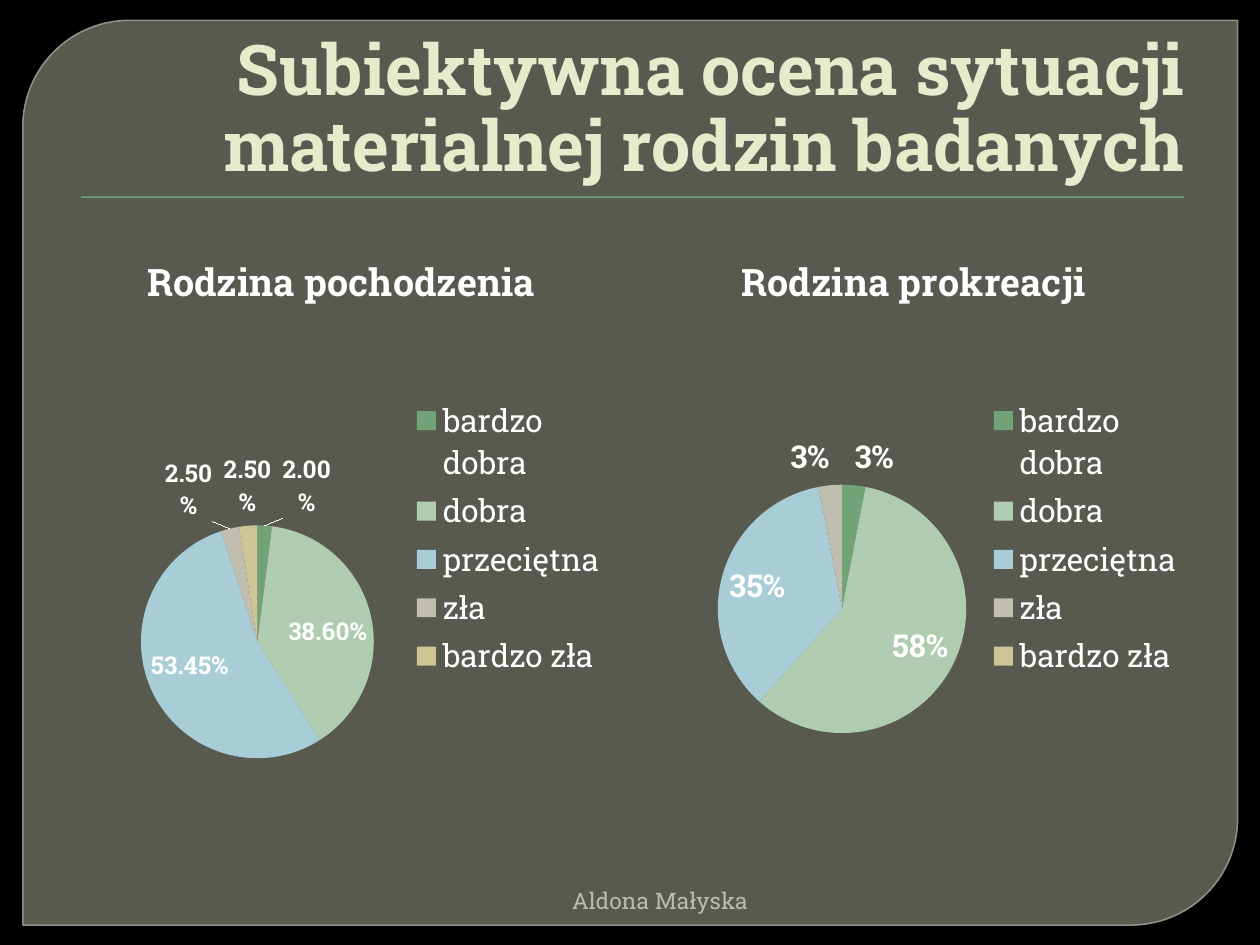
from lxml import etree
from pptx import Presentation
from pptx.chart.data import CategoryChartData
from pptx.dml.color import RGBColor
from pptx.enum.chart import XL_CHART_TYPE, XL_LABEL_POSITION, XL_LEGEND_POSITION
from pptx.enum.shapes import MSO_SHAPE
from pptx.enum.text import MSO_ANCHOR, PP_ALIGN
from pptx.oxml import parse_xml
from pptx.oxml.ns import nsdecls, qn
from pptx.util import Cm, Pt

FONT = "Roboto Slab"
BLACK = RGBColor(0x00, 0x00, 0x00)
WHITE = RGBColor(0xFF, 0xFF, 0xFF)
CARD = RGBColor(0x88, 0x8B, 0x7B)
CARD_LINE = RGBColor(0x9D, 0xA0, 0x90)
CREAM = RGBColor(0xE7, 0xEA, 0xCB)
GREY = RGBColor(0xB9, 0xBB, 0xB2)
GREEN = RGBColor(0x72, 0xA3, 0x76)
SLICES = [GREEN, RGBColor(0xB0, 0xCC, 0xB0), RGBColor(0xA8, 0xCD, 0xD7),
          RGBColor(0xC0, 0xBE, 0xAF), RGBColor(0xCE, 0xC5, 0x97)]

RATINGS = ["bardzo dobra", "dobra", "przeciętna", "zła", "bardzo zła"]
# Title, left edge, values, number format, label size
PIES = [
    ("Rodzina pochodzenia", Cm(1.27), [0.02, 0.386, 0.5345, 0.025, 0.025], "0.00%", Pt(14)),
    ("Rodzina prokreacji ", Cm(12.9), [0.03, 0.58, 0.35, 0.03, 0], "0%", Pt(18)),
]


def style(font, size, color, bold=False):
    font.name = FONT
    font.size = size
    font.bold = bold
    font.color.rgb = color


def set_alpha(fill_parent, percent):
    color = fill_parent.find(qn("a:solidFill"))[0]
    etree.SubElement(color, qn("a:alpha"), val=str(percent * 1000))


def add_backdrop(s):
    """Rounded card and rule, placed behind the title."""
    card = s.shapes.add_shape(MSO_SHAPE.ROUND_2_DIAG_RECTANGLE,
                              Cm(0.46), Cm(0.41), Cm(24.49), Cm(18.24))
    card.adjustments[0] = 0.118
    card.fill.solid()
    card.fill.fore_color.rgb = CARD
    set_alpha(card._element.spPr, 65)
    card.line.color.rgb = CARD_LINE
    card.line.width = Pt(0.87)
    set_alpha(card.line._ln, 88)

    rule = s.shapes.add_shape(MSO_SHAPE.RECTANGLE, Cm(1.63), Cm(3.96), Cm(22.23), Cm(0.03))
    rule.fill.solid()
    rule.fill.fore_color.rgb = GREEN
    rule.line.fill.background()

    for index, sp in enumerate((card, rule), start=2):
        sp.shadow.inherit = False
        s.shapes._spTree.insert(index, sp._element)


def set_title(s, text):
    title = s.shapes.title
    title.left, title.top, title.width, title.height = Cm(1.27), Cm(0.71), Cm(22.86), Cm(3.18)
    tf = title.text_frame
    tf.text = text
    tf.vertical_anchor = MSO_ANCHOR.BOTTOM
    p = tf.paragraphs[0]
    p.alignment = PP_ALIGN.RIGHT
    p.line_spacing = 0.9
    style(p.font, Pt(40), CREAM, bold=True)


def add_pie(s, title, left, values, number_format, label_size):
    data = CategoryChartData()
    data.categories = RATINGS
    data.add_series("Series 1", values)
    chart = s.shapes.add_chart(XL_CHART_TYPE.PIE, left, Cm(4.57),
                               Cm(11.23), Cm(12.57), data).chart
    style(chart.font, Pt(18), WHITE)

    chart.has_title = True
    chart.chart_title.include_in_layout = False
    tf = chart.chart_title.text_frame
    tf.text = title
    style(tf.paragraphs[0].font, Pt(21.6), WHITE, bold=True)

    chart.has_legend = True
    chart.legend.position = XL_LEGEND_POSITION.RIGHT
    chart.legend.include_in_layout = False

    plot = chart.plots[0]
    plot.vary_by_categories = True
    series = plot.series[0]
    for i, color in enumerate(SLICES):
        fill = series.points[i].format.fill
        fill.solid()
        fill.fore_color.rgb = color

    labels = series.data_labels
    labels.show_value = True
    labels.number_format = number_format
    labels.number_format_is_linked = False
    labels.position = XL_LABEL_POSITION.BEST_FIT
    style(labels.font, label_size, WHITE, bold=True)
    # Empty slices carry no label
    for i, value in enumerate(values):
        if value == 0:
            labels._element.insert(0, parse_xml(
                f'<c:dLbl {nsdecls("c")}><c:idx val="{i}"/><c:delete val="1"/></c:dLbl>'))


def add_footer(s, text):
    tf = s.shapes.add_textbox(Cm(3.61), Cm(17.78), Cm(11.71), Cm(0.76)).text_frame
    tf.word_wrap = True
    tf.vertical_anchor = MSO_ANCHOR.MIDDLE
    p = tf.paragraphs[0]
    p.text = text
    p.alignment = PP_ALIGN.RIGHT
    style(p.font, Pt(13), GREY)


def main():
    prs = Presentation()
    prs.slide_width, prs.slide_height = Cm(25.4), Cm(19.05)
    s = prs.slides.add_slide(prs.slide_layouts[5])
    s.background.fill.solid()
    s.background.fill.fore_color.rgb = BLACK

    add_backdrop(s)
    set_title(s, "Subiektywna ocena sytuacji materialnej rodzin badanych")
    for pie in PIES:
        add_pie(s, *pie)
    add_footer(s, "Aldona Małyska")
    prs.save("out.pptx")


if __name__ == "__main__":
    main()
